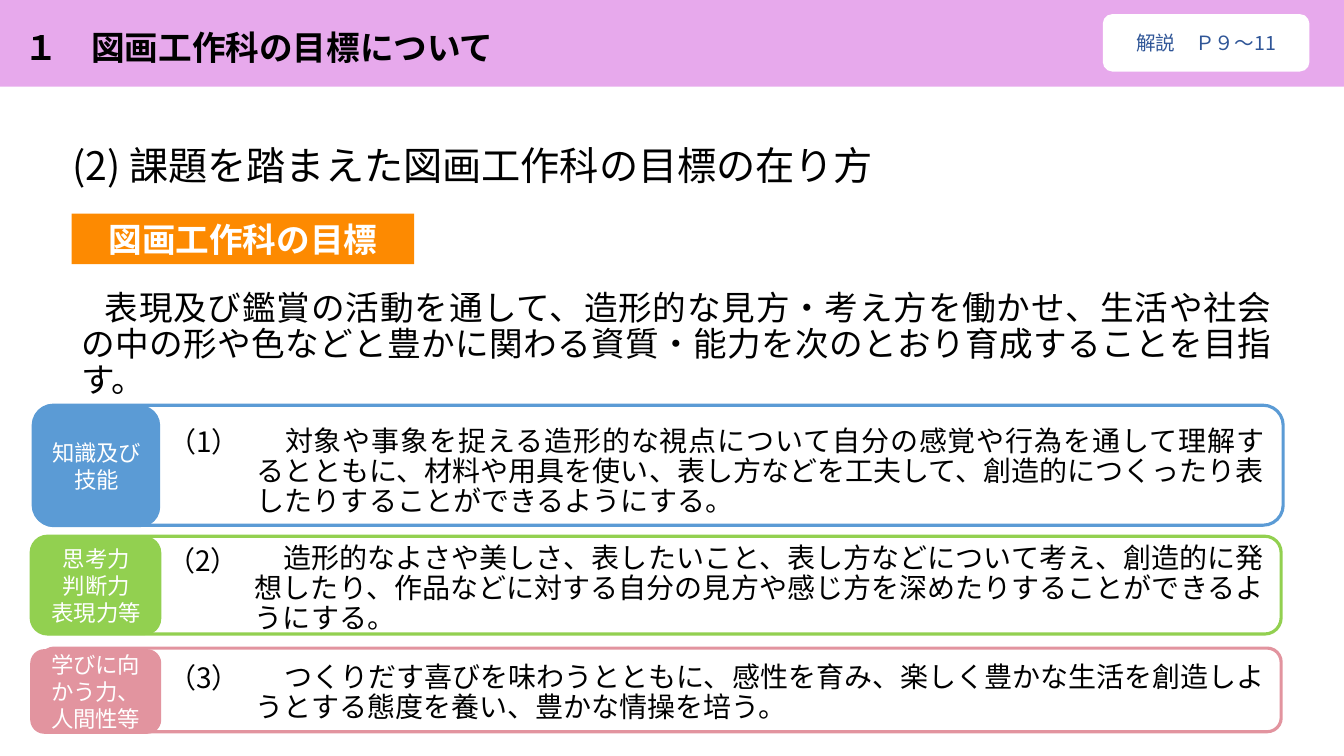
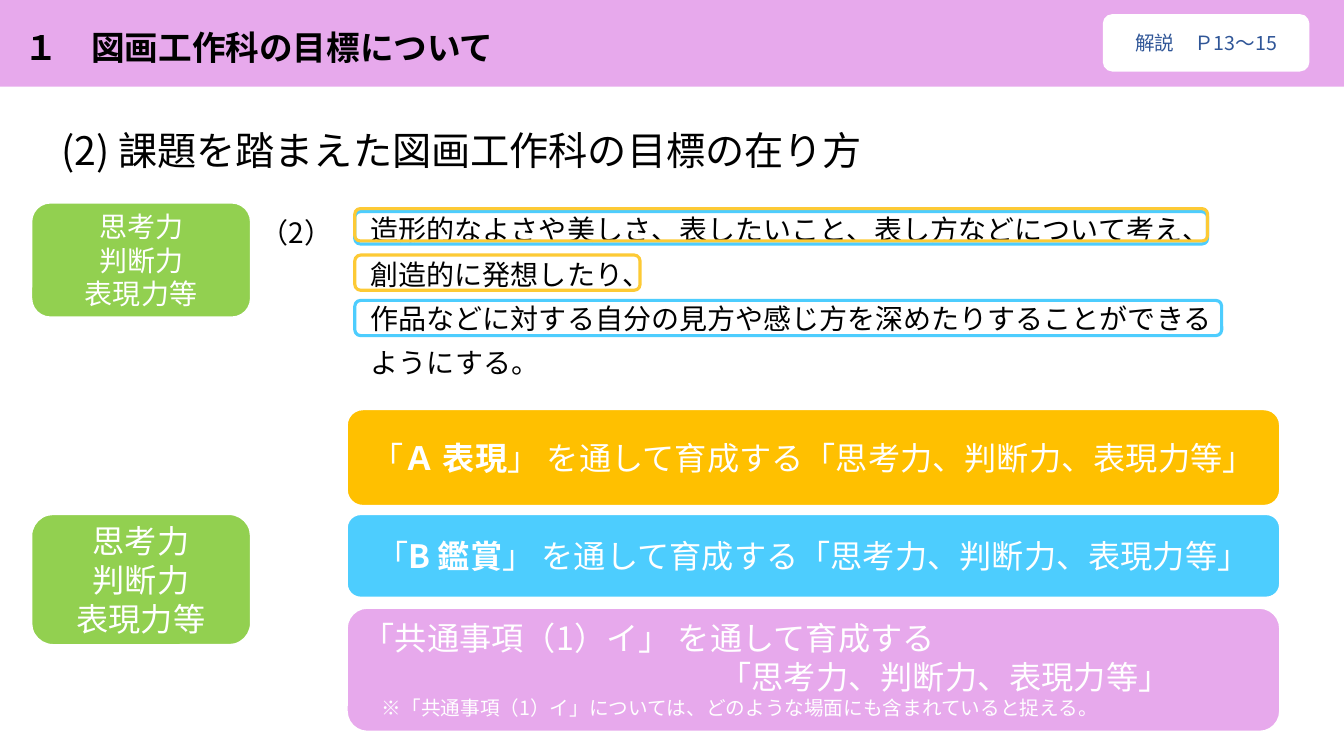
from dataclasses import dataclass

from pptx import Presentation
from pptx import util as u
from pptx.dml.color import RGBColor
from pptx.enum import shapes, text
from pptx.oxml.ns import qn
from lxml import etree

# Grid: one cell is a tenth of an inch
CELL = u.Inches(0.1)
COLUMNS, ROWS = 133.33, 75
FONT = "Noto Sans CJK JP"
COLORS = {
    "black": "000000", "white": "FFFFFF", "navy": "2F5597", "lilac": "E7A9EC",
    "orange": "FD8A01", "blue": "5B9BD5", "green": "92D050", "rose": "E2949F",
    "gold": "FFC000", "sky": "4DCDFE", "amber": "FDCA35",
}
RECT = shapes.MSO_SHAPE.RECTANGLE
ROUND = shapes.MSO_SHAPE.ROUNDED_RECTANGLE
BADGE = shapes.MSO_SHAPE.FLOWCHART_ALTERNATE_PROCESS
CENTER, JUSTIFY, LEFT = (text.PP_ALIGN.CENTER, text.PP_ALIGN.JUSTIFY,
                         text.PP_ALIGN.LEFT)
MIDDLE, TOP = text.MSO_ANCHOR.MIDDLE, text.MSO_ANCHOR.TOP
THINKING = ("思考力", "判断力", "表現力等")


@dataclass(frozen=True)
class Area:
    """A place on the grid, in cells."""
    left: float
    top: float
    width: float
    height: float

    def lengths(self) -> list[int]:
        return [round(n * CELL) for n in (self.left, self.top, self.width, self.height)]


@dataclass(frozen=True)
class Style:
    size: float
    color: str = "black"
    bold: bool = False
    align: text.PP_ALIGN = LEFT
    anchor: text.MSO_ANCHOR = TOP
    spacing: float = 1.0
    before: float = 0
    margin: float = 0        # left margin of every line, in cells
    first_line: float = 0    # extra indent of the first line, in cells
    wrap: bool = True


@dataclass(frozen=True)
class Goal:
    number: str
    lines: tuple[str, ...]
    color: str
    statement: str
    tag: Area
    frame: Area
    number_area: Area
    text_area: Area
    align: text.PP_ALIGN = JUSTIFY


@dataclass(frozen=True)
class Bar:
    color: str
    top: float
    height: float
    name: str = ""


def label(size: float, color: str = "white", bold: bool = False) -> Style:
    return Style(size, color, bold, CENTER, MIDDLE)


def prose(size: float, **extra) -> Style:
    return Style(size, **{"align": JUSTIFY, "spacing": 0.9, "before": 10, **extra})


def format_para(para, style: Style) -> None:
    para.alignment = style.align
    para.line_spacing = style.spacing
    para.space_before = u.Pt(style.before)
    properties = para._p.get_or_add_pPr()
    properties.set("marL", str(round(style.margin * CELL)))
    properties.set("indent", str(round(style.first_line * CELL)))
    for span in para.runs:
        span.font.size = u.Pt(style.size)
        span.font.bold = style.bold
        span.font.name = FONT
        span.font.color.rgb = RGBColor.from_string(COLORS[style.color])
        east_asian = etree.SubElement(span._r.get_or_add_rPr(), qn("a:ea"))
        east_asian.set("typeface", FONT)


def write(box, lines: tuple[str, ...], *styles: Style) -> None:
    """Write one paragraph per line; the last style serves the remaining lines."""
    frame = box.text_frame
    frame.word_wrap = styles[0].wrap
    frame.vertical_anchor = styles[0].anchor
    frame.text = "\n".join(lines)
    for index, para in enumerate(frame.paragraphs):
        format_para(para, styles[min(index, len(styles) - 1)])


def add_text(page, area: Area, lines: tuple[str, ...], style: Style):
    box = page.shapes.add_textbox(*area.lengths())
    write(box, lines, style)
    return box


def add_box(page, kind, area: Area, fill: str = "", line: str = "",
            weight: float = 2.25):
    box = page.shapes.add_shape(kind, *area.lengths())
    box.shadow.inherit = False
    if fill:
        box.fill.solid()
        box.fill.fore_color.rgb = RGBColor.from_string(COLORS[fill])
    else:
        box.fill.background()
    if line:
        box.line.color.rgb = RGBColor.from_string(COLORS[line])
        box.line.width = u.Pt(weight)
    else:
        box.line.fill.background()
    return box


def add_page(deck, pages: str, heading_left: float, heading_top: float):
    """Start a page with the shared band, title, page badge and heading."""
    page = deck.slides.add_slide(deck.slide_layouts[6])
    add_box(page, RECT, Area(0, 0, COLUMNS, 8.6), "lilac")
    add_text(page, Area(1.4, 2.4, 115, 5.1), ("１　図画工作科の目標について",),
             Style(24, bold=True, anchor=MIDDLE, spacing=0.9))
    badge = add_box(page, BADGE, Area(109.4, 1.4, 20.5, 5.7), "white")
    write(badge, (f"解説　Ｐ{pages}",), label(14, "navy"))
    add_text(page, Area(heading_left, heading_top, 83, 5.7),
             ("(2) 課題を踏まえた図画工作科の目標の在り方",), Style(28, wrap=False))
    return page


GOALS = (
    Goal("（1）", ("知識及び技能",), "blue",
         "対象や事象を捉える造形的な視点について自分の感覚や行為を通して理解するとともに、"
         "材料や用具を使い、表し方などを工夫して、創造的につくったり表したりすることができるようにする。",
         Area(3.3, 40.2, 12.6, 12.1), Area(3.3, 40.2, 124, 11.9),
         Area(15.7, 42, 10.9, 3.7), Area(24.5, 41.9, 101.9, 9.7)),
    Goal("（2）", THINKING, "green",
         "造形的なよさや美しさ、表したいこと、表し方などについて考え、創造的に発想したり、"
         "作品などに対する自分の見方や感じ方を深めたりすることができるようにする。",
         Area(3.1, 53.2, 12.9, 9.8), Area(3.1, 53.2, 124, 9.7),
         Area(15.6, 53.8, 10.8, 3.3), Area(24.3, 53.5, 102.1, 9.7)),
    Goal("（3）", ("学びに向かう力、人間性等",), "rose",
         "つくりだす喜びを味わうとともに、感性を育み、楽しく豊かな生活を創造しよ"
         "うとする態度を養い、豊かな情操を培う。",
         Area(3, 64.4, 13, 8.4), Area(4, 64.3, 123.1, 8.3),
         Area(15.7, 65.4, 10.7, 4.2), Area(24.4, 65.3, 102.8, 8.5), LEFT),
)

BARS = (
    Bar("gold", 40.6, 9.6, "Ａ 表現"),
    Bar("sky", 51, 8.3, "B 鑑賞"),
    Bar("lilac", 60.3, 12.3),
)


def add_goal(page, goal: Goal) -> None:
    add_text(page, goal.text_area, (goal.statement,),
             prose(20, align=goal.align, first_line=2.8))
    add_text(page, goal.number_area, (goal.number,), prose(20))
    add_box(page, ROUND, goal.frame, line=goal.color)
    write(add_box(page, ROUND, goal.tag, goal.color), goal.lines, label(16))


def add_bar(page, bar: Bar) -> None:
    area = Area(34.4, bar.top, 92.6, bar.height)
    box = add_box(page, ROUND, area, bar.color, "white", 1.5)
    if not bar.name:
        # Shared items: heading, indented continuation and small remark
        write(box, ("「共通事項（1）イ」 を通して育成する",
                    "「思考力、判断力、表現力等」",
                    "※「共通事項（1）イ」については、どのような場面にも含まれていると捉える。"),
              Style(23, "white"), Style(23, "white", margin=35.4),
              Style(14, "white", margin=1.9))
        return
    write(box, ("「",), label(23))
    para = box.text_frame.paragraphs[0]
    for part in (bar.name, "」 を通して育成する「思考力、判断力、表現力等」"):
        para.add_run().text = part
    format_para(para, label(23))
    para.runs[1].font.bold = True


def build_goals(deck) -> None:
    page = add_page(deck, "９～11", 6.2, 13.5)
    banner = add_box(page, RECT, Area(7.1, 21.2, 34, 5), "orange")
    write(banner, ("図画工作科の目標",), label(24, bold=True))
    add_text(page, Area(7.1, 28.4, 120.1, 15.1),
             ("表現及び鑑賞の活動を通して、造形的な見方・考え方を働かせ、生活や社会の中の形や色などと"
              "豊かに関わる資質・能力を次のとおり育成することを目指す。",),
             prose(24, first_line=2.3))
    for goal in GOALS:
        add_goal(page, goal)


def build_thinking(deck) -> None:
    page = add_page(deck, "13～15", 5.1, 12)
    # Green tags beside the statement and the bars
    for top, height, size in ((20.1, 11.4, 20), (51, 13, 23)):
        tag = add_box(page, ROUND, Area(3.1, top, 21.8, height), "green", "white", 1.5)
        write(tag, THINKING, label(size))
    add_text(page, Area(33, 21, 94.6, 12.3),
             ("造形的なよさや美しさ、表したいこと、表し方などについて考え、",
              "創造的に発想したり、",
              "作品などに対する自分の見方や感じ方を深めたりすることができる",
              "ようにする。"), prose(20, margin=2.8))
    add_text(page, Area(24.9, 21.3, 13.4, 4.2), ("（2）",), prose(20))
    # Frames around the phrases: sky for appreciation, amber for expression
    for color, top, width, height in (
            ("sky", 21, 84.6, 3.2), ("amber", 25.3, 28.3, 3.5),
            ("sky", 29.8, 86, 3.5), ("amber", 20.7, 84.6, 3.2)):
        add_box(page, ROUND, Area(35.2, top, width, height), line=color)
    for bar in BARS:
        add_bar(page, bar)


def main() -> None:
    deck = Presentation()
    deck.slide_width = round(COLUMNS * CELL)
    deck.slide_height = ROWS * CELL
    build_goals(deck)
    build_thinking(deck)
    deck.save("out.pptx")


if __name__ == "__main__":
    main()
